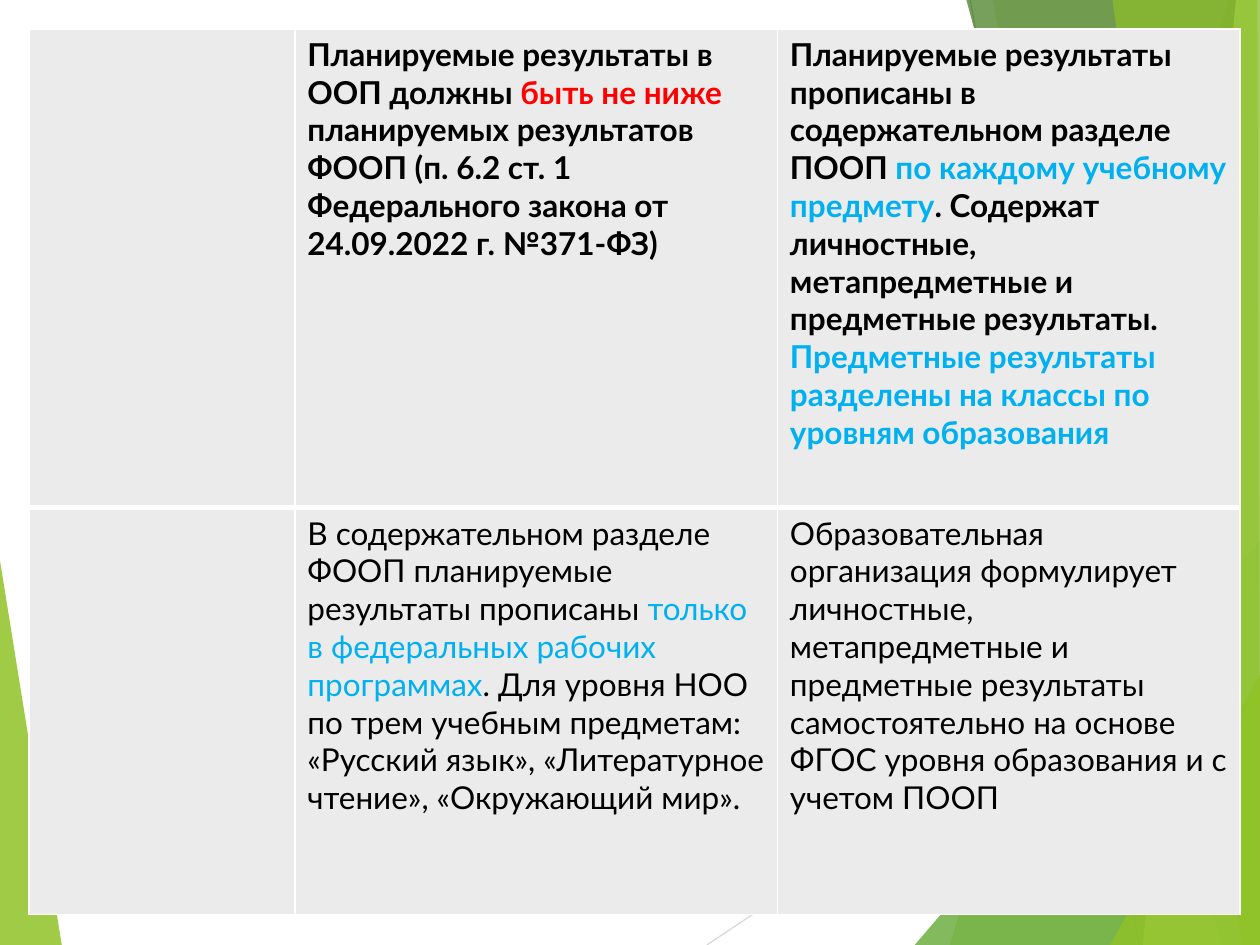
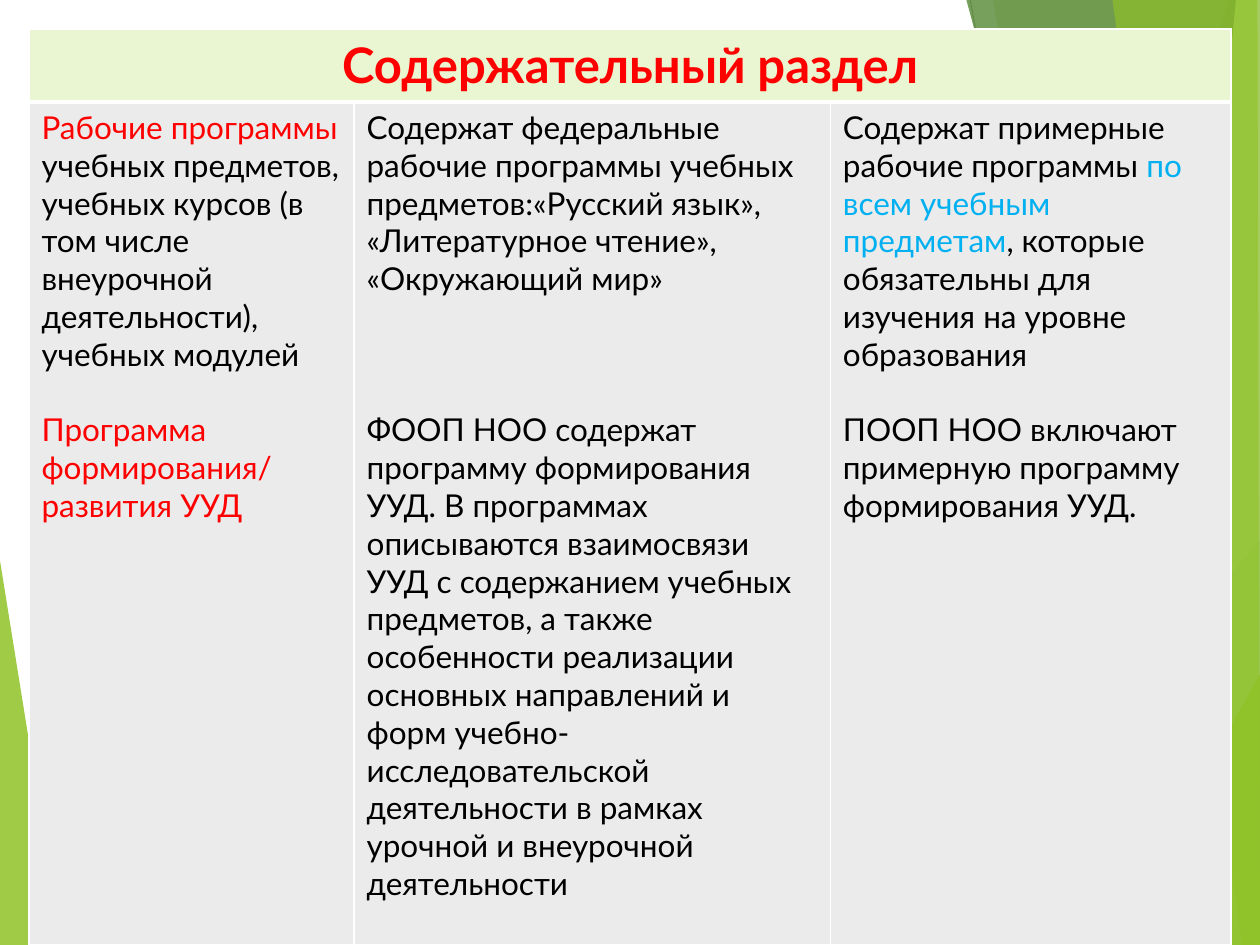
from dataclasses import dataclass

from lxml.etree import SubElement
from pptx import Presentation
from pptx.dml.color import RGBColor
from pptx.enum.shapes import MSO_CONNECTOR
from pptx.enum.text import PP_ALIGN
from pptx.oxml import parse_xml
from pptx.oxml.ns import nsdecls, qn
from pptx.slide import Slide
from pptx.table import _Cell
from pptx.util import Inches, Pt

COLORS = {
    "white": "FFFFFF",
    "black": "000000",
    "red": "FF0000",
    "blue": "00B0F0",
    "cell": "EBEBEB",
    "heading": "EAF6D1",
    "green": "90C226",
    "leaf": "54A021",
    "forest": "3F7819",
    "lime": "C0E474",
    "light_ray": "D9D9D9",
    "ray": "BFBFBF",
}
FONT = "Lato"
BODY_SIZE = 18
HEADING_SIZE = 28
LINE_HEIGHT = 1.2 * BODY_SIZE
TABLE_MARGIN = 0.23
THIN, THICK = 1, 3


@dataclass(frozen=True)
class Facet:
    color: str
    opacity: int
    points: tuple[tuple[float, float], ...]


@dataclass(frozen=True)
class Ray:
    color: str
    start: tuple[float, float]
    end: tuple[float, float]


@dataclass(frozen=True)
class Phrase:
    text: str
    color: str = "black"


@dataclass(frozen=True)
class Passage:
    phrases: tuple[Phrase, ...]
    lines_before: int = 0


@dataclass(frozen=True)
class Entry:
    passages: tuple[Passage, ...] = ()
    bold: bool = False
    size: int = BODY_SIZE
    fill: str = "cell"
    align: PP_ALIGN = PP_ALIGN.LEFT


@dataclass(frozen=True)
class Comparison:
    columns: tuple[float, ...]
    rows: tuple[float, ...]
    entries: tuple[tuple[Entry, ...], ...]


BACKDROP = (
    Facet("green", 85, ((0, 4.45), (0.49, 7.5), (0, 7.5))),
    Ray("light_ray", (5.61, 7.5), (10, 4.57)),
    Ray("ray", (7.7, 0), (9.04, 7.5)),
    Facet("green", 30, ((9.75, 0), (7.54, 7.5), (10, 7.5), (10, 0))),
    Facet("green", 20, ((7.88, 0), (9.19, 7.5), (10, 7.5), (10, 0))),
    Facet("leaf", 72, ((7.26, 7.5), (10, 4.29), (10, 7.5))),
    Facet("forest", 70, ((7.67, 0), (9.7, 7.5), (10, 7.5), (10, 0))),
    Facet("lime", 70, ((9.81, 0), (9.07, 7.5), (10, 7.5), (10, 0))),
    Facet("green", 65, ((8.83, 0), (9.86, 7.5), (10, 7.5), (9.98, 0))),
    Facet("green", 80, ((8.81, 7.5), (10, 5.35), (10, 7.5))),
)

PLANNED_RESULTS = Comparison(
    columns=(2.11, 3.83, 3.67),
    rows=(3.8, 3.23),
    entries=(
        (
            Entry(),
            Entry((Passage((
                Phrase("Планируемые результаты в ООП должны "),
                Phrase("быть не ниже ", "red"),
                Phrase("планируемых результатов ФООП (п. 6.2 ст. 1 "
                       "Федерального закона от 24.09.2022 г. №371-ФЗ)"),
            )),), bold=True),
            Entry((Passage((
                Phrase("Планируемые результаты прописаны в содержательном разделе ПООП "),
                Phrase("по каждому учебному предмету", "blue"),
                Phrase(". Содержат личностные, метапредметные и предметные результаты. "),
                Phrase("Предметные результаты разделены на классы по уровням образования", "blue"),
            )),), bold=True),
        ),
        (
            Entry(),
            Entry((Passage((
                Phrase("В содержательном разделе ФООП планируемые результаты прописаны "),
                Phrase("только в федеральных рабочих программах", "blue"),
                Phrase(". Для уровня НОО по трем учебным предметам: «Русский язык», "
                       "«Литературное чтение», «Окружающий мир»."),
            )),)),
            Entry((Passage((
                Phrase("Образовательная организация формулирует личностные, метапредметные "
                       "и предметные результаты самостоятельно на основе ФГОС уровня "
                       "образования и с учетом ПООП"),
            )),)),
        ),
    ),
)

CONTENT_SECTION = Comparison(
    columns=(2.58, 3.78, 3.18),
    rows=(0.58, 6.69),
    entries=(
        (
            Entry((Passage((Phrase("Содержательный раздел", "red"),)),), bold=True,
                  size=HEADING_SIZE, fill="heading", align=PP_ALIGN.CENTER),
        ),
        (
            Entry((
                Passage((
                    Phrase("Рабочие программы ", "red"),
                    Phrase("учебных предметов, учебных курсов (в том числе "
                           "внеурочной деятельности), учебных модулей"),
                )),
                Passage((Phrase("Программа формирования/", "red"),), lines_before=1),
                Passage((Phrase("развития УУД", "red"),)),
            )),
            Entry((
                Passage((Phrase("Содержат федеральные рабочие программы учебных "
                                "предметов:«Русский язык», «Литературное чтение», "
                                "«Окружающий мир»"),)),
                Passage((Phrase("ФООП НОО содержат программу формирования УУД. В программах "
                                "описываются взаимосвязи УУД с содержанием учебных предметов, "
                                "а также особенности реализации основных направлений и форм "
                                "учебно-исследовательской деятельности в рамках урочной и "
                                "внеурочной деятельности"),), lines_before=3),
            )),
            Entry((
                Passage((
                    Phrase("Содержат примерные рабочие программы "),
                    Phrase("по всем учебным предметам", "blue"),
                    Phrase(", которые обязательны для изучения на уровне образования"),
                )),
                Passage((Phrase("ПООП НОО включают примерную программу формирования УУД."),),
                        lines_before=1),
            )),
        ),
    ),
)


def rgb(name: str) -> RGBColor:
    return RGBColor.from_string(COLORS[name])


def draw_facet(slide: Slide, facet: Facet) -> None:
    first, *others = [(Inches(x), Inches(y)) for x, y in facet.points]
    builder = slide.shapes.build_freeform(*first)
    builder.add_line_segments(others, close=True)
    outline = builder.convert_to_shape()
    outline.shadow.inherit = False
    outline.line.fill.background()
    outline.fill.solid()
    outline.fill.fore_color.rgb = rgb(facet.color)
    tint = outline.fill._xPr.find(qn("a:solidFill"))[0]
    SubElement(tint, qn("a:alpha"), val=str(facet.opacity * 1000))


def draw_ray(slide: Slide, ray: Ray) -> None:
    ends = [Inches(value) for value in ray.start + ray.end]
    connector = slide.shapes.add_connector(MSO_CONNECTOR.STRAIGHT, *ends)
    connector.line.color.rgb = rgb(ray.color)
    connector.line.width = Pt(0.75)
    SubElement(connector._element.spPr, qn("a:effectLst"))


def draw_backdrop(slide: Slide) -> None:
    for part in BACKDROP:
        if isinstance(part, Facet):
            draw_facet(slide, part)
        else:
            draw_ray(slide, part)


def set_borders(cell: _Cell, top: int, bottom: int) -> None:
    properties = cell._tc.get_or_add_tcPr()
    widths = {"lnL": THIN, "lnR": THIN, "lnT": top, "lnB": bottom}
    for position, (side, width) in enumerate(widths.items()):
        border = parse_xml(
            f'<a:{side} {nsdecls("a")} w="{Pt(width)}"><a:solidFill>'
            f'<a:srgbClr val="{COLORS["white"]}"/></a:solidFill></a:{side}>'
        )
        properties.insert(position, border)


def fill_cell(cell: _Cell, entry: Entry) -> None:
    cell.fill.solid()
    cell.fill.fore_color.rgb = rgb(entry.fill)
    frame = cell.text_frame
    frame.text = "\n".join("" for _ in entry.passages)
    for paragraph, passage in zip(frame.paragraphs, entry.passages):
        paragraph.alignment = entry.align
        paragraph.space_before = Pt(passage.lines_before * LINE_HEIGHT)
        for phrase in passage.phrases:
            run = paragraph.add_run()
            run.text = phrase.text
            run.font.name = FONT
            run.font.size = Pt(entry.size)
            run.font.bold = entry.bold
            run.font.color.rgb = rgb(phrase.color)


def draw_comparison(slide: Slide, comparison: Comparison) -> None:
    table = slide.shapes.add_table(
        len(comparison.rows), len(comparison.columns),
        Inches(TABLE_MARGIN), Inches(TABLE_MARGIN),
        Inches(sum(comparison.columns)), Inches(sum(comparison.rows)),
    ).table
    table.first_row = False
    table.horz_banding = False
    for column, width in zip(table.columns, comparison.columns):
        column.width = Inches(width)
    for row_index, entries in enumerate(comparison.entries):
        row = table.rows[row_index]
        row.height = Inches(comparison.rows[row_index])
        top, bottom = (THIN, THICK) if row_index == 0 else (THICK, THIN)
        for cell in row.cells:
            set_borders(cell, top, bottom)
        for cell, entry in zip(row.cells, entries):
            fill_cell(cell, entry)
        if len(entries) == 1:
            row.cells[0].merge(row.cells[len(comparison.columns) - 1])


def main() -> None:
    deck = Presentation()
    deck.slide_width = Inches(10)
    deck.slide_height = Inches(7.5)
    for comparison in (PLANNED_RESULTS, CONTENT_SECTION):
        slide = deck.slides.add_slide(deck.slide_layouts[6])
        draw_backdrop(slide)
        draw_comparison(slide, comparison)
    deck.save("out.pptx")


if __name__ == "__main__":
    main()
